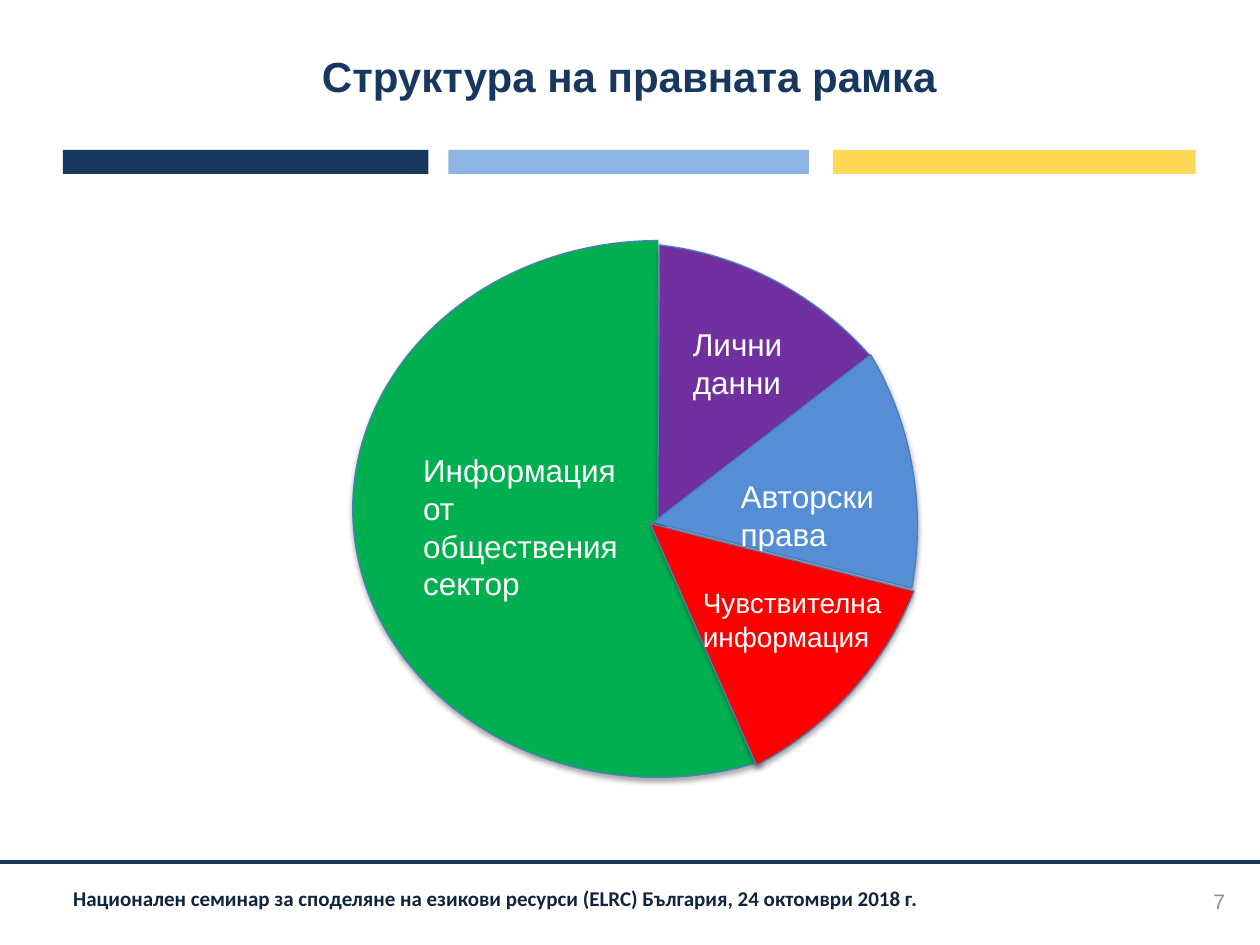
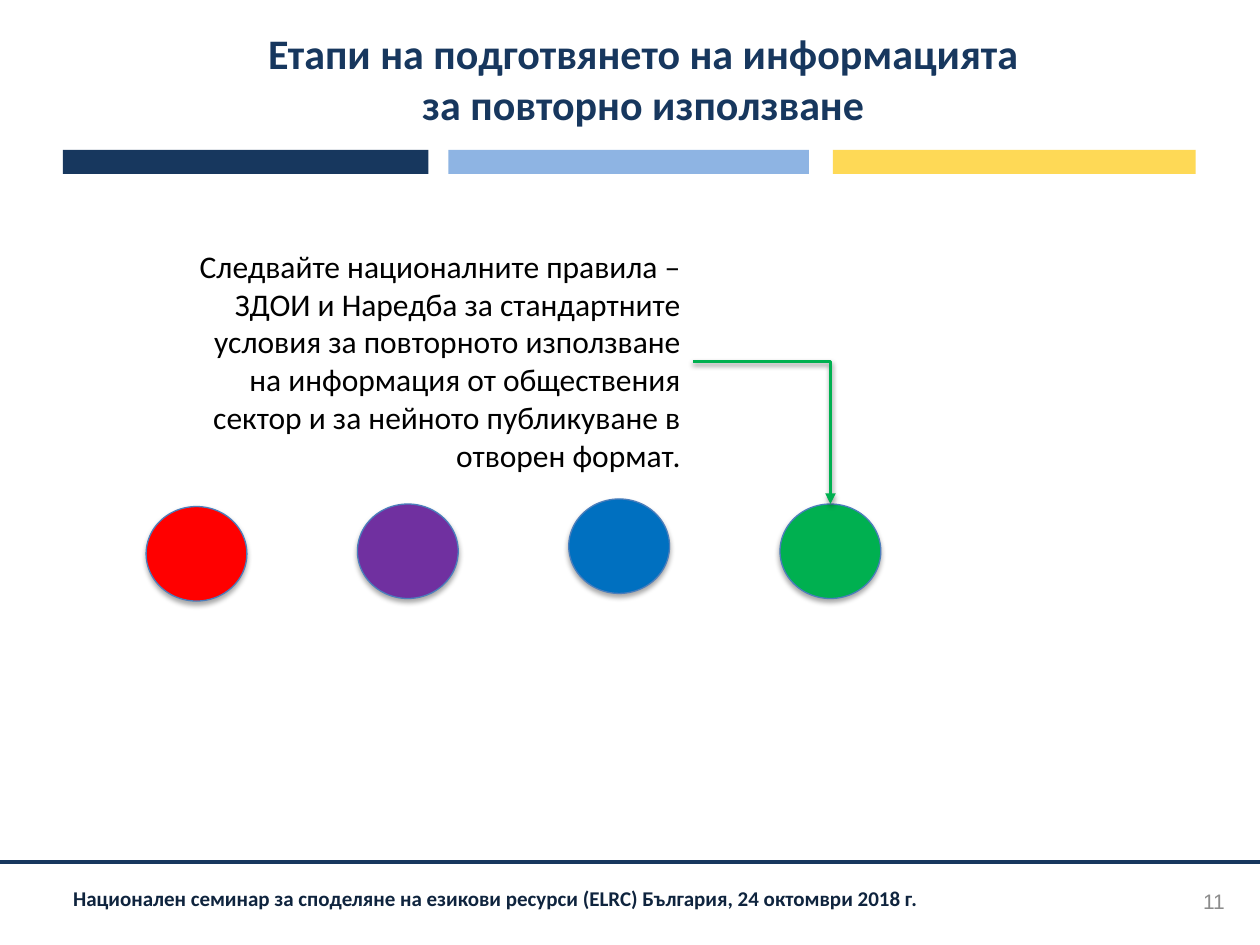
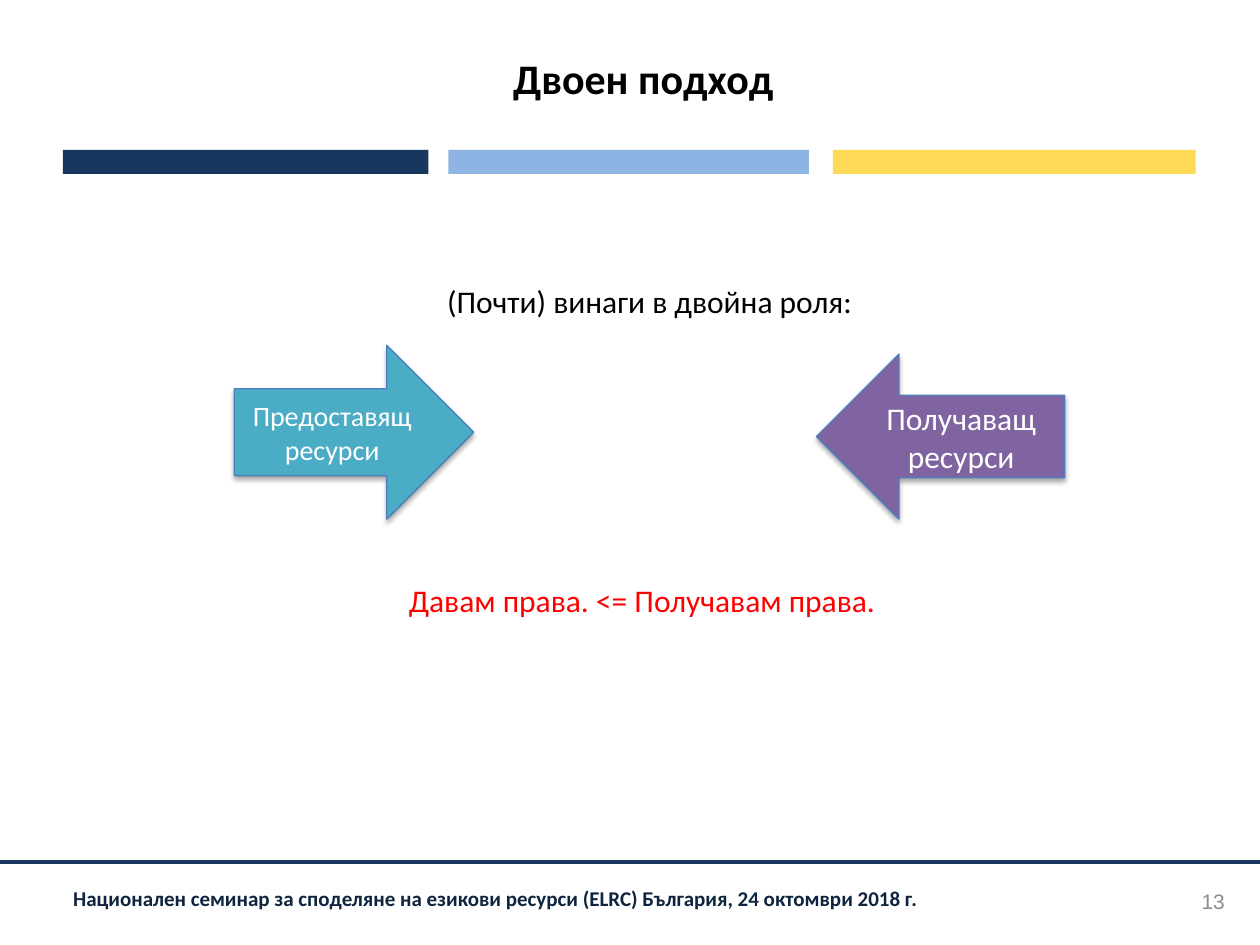
from collections import namedtuple

from lxml import etree
from pptx import Presentation
from pptx.dml.color import RGBColor
from pptx.enum.shapes import MSO_CONNECTOR, MSO_SHAPE
from pptx.enum.text import MSO_ANCHOR, PP_ALIGN
from pptx.oxml.ns import qn
from pptx.util import Emu, Inches, Pt

LEFT, CENTER, RIGHT = PP_ALIGN.LEFT, PP_ALIGN.CENTER, PP_ALIGN.RIGHT
TOP, MIDDLE = MSO_ANCHOR.TOP, MSO_ANCHOR.MIDDLE
RECTANGLE, OVAL, PIE = MSO_SHAPE.RECTANGLE, MSO_SHAPE.OVAL, MSO_SHAPE.PIE
RIGHT_ARROW, LEFT_ARROW = MSO_SHAPE.RIGHT_ARROW, MSO_SHAPE.LEFT_ARROW
STRAIGHT, ELBOW = MSO_CONNECTOR.STRAIGHT, MSO_CONNECTOR.ELBOW
SIDE_TOP, SIDE_RIGHT = 0, 3

# Grid: 100 columns by 75 rows of square cells
WIDTH, HEIGHT = Inches(10), Inches(7.5)
CELL = WIDTH / 100

NAVY, SKY, YELLOW = "17375E", "8EB4E3", "FED956"
INK, GREY, OUTLINE = "0F243E", "8C8C8C", "4B7EBC"
GREEN, PURPLE, RED = "00B050", "7030A0", "FF0000"
BLACK, WHITE = "000000", "FFFFFF"

FOOTER = ("Национален семинар за споделяне на езикови ресурси (ELRC) "
          "България, 24 октомври 2018 г.")

Box = namedtuple("Box", "x y w h")
Style = namedtuple("Style", "size font color bold", defaults=(False,))


def color(hex_value):
    return RGBColor.from_string(hex_value)


def cells(*values):
    return [Emu(round(value * CELL)) for value in values]


def inside(area, x, y, w, h):
    """Box given relative to the top left corner of an area."""
    return Box(area.x + x, area.y + y, w, h)


def add_effects(item, opacity=None, distance=1.8):
    """Empty effect list, or a soft shadow below when opacity is given."""
    effects = etree.SubElement(item._element.spPr, qn("a:effectLst"))
    if opacity:
        shadow = etree.SubElement(
            effects, qn("a:outerShdw"), blurRad=str(Pt(3.1)),
            dist=str(Pt(distance)), dir="5400000", rotWithShape="0")
        tint = etree.SubElement(shadow, qn("a:srgbClr"), val=BLACK)
        etree.SubElement(tint, qn("a:alpha"), val=str(opacity * 1000))


def write(frame, text, style, align=LEFT, anchor=TOP, insets=(0.1, 0.05),
          hanging=0, spacing=None):
    frame.word_wrap = True
    frame.vertical_anchor = anchor
    frame.margin_left = frame.margin_right = Inches(insets[0])
    frame.margin_top = frame.margin_bottom = Inches(insets[1])
    paragraph = frame.paragraphs[0]
    paragraph.alignment = align
    paragraph.line_spacing = spacing
    if hanging:
        properties = paragraph._p.get_or_add_pPr()
        properties.set("marL", str(Inches(hanging)))
        properties.set("indent", str(-Inches(hanging)))
    run = paragraph.add_run()
    run.text = text
    run.font.size = Pt(style.size)
    run.font.name = style.font
    run.font.bold = style.bold
    run.font.color.rgb = color(style.color)


def add_text(slide, box, text, style, **layout):
    label = slide.shapes.add_textbox(*cells(*box))
    write(label.text_frame, text, style, **layout)
    return label


def add_figure(slide, kind, box, fill, raised=True):
    figure = slide.shapes.add_shape(kind, *cells(*box))
    figure.fill.solid()
    figure.fill.fore_color.rgb = color(fill)
    if raised:
        figure.line.color.rgb = color(OUTLINE)
        figure.line.width = Pt(0.75)
        add_effects(figure, opacity=35)
    else:
        figure.line.fill.background()
        figure.shadow.inherit = False
    return figure


def add_line(slide, kind, ends, stroke, width):
    line = slide.shapes.add_connector(kind, *cells(*ends))
    line.line.color.rgb = color(stroke)
    line.line.width = Pt(width)
    return line


def add_frame(deck, title, title_box, title_style, number):
    """Blank slide with title, three-colour band, footer and number."""
    slide = deck.slides.add_slide(deck.slide_layouts[6])
    for x, width, fill in ((5, 29, NAVY), (35.6, 28.6, SKY),
                           (66.1, 28.8, YELLOW)):
        add_figure(slide, RECTANGLE, Box(x, 11.9, width, 1.9), fill,
                   raised=False)
    add_text(slide, Box(5, 70.1, 69.9, 2.6), FOOTER,
             Style(12, "Calibri", INK, True), insets=(0.08, 0.04),
             hanging=0.25, spacing=0.9)
    add_effects(add_line(slide, STRAIGHT, (100, 68.4, 0, 68.4), NAVY, 2.25))
    add_text(slide, title_box, title, title_style, align=CENTER,
             anchor=MIDDLE, insets=(0, 0))
    add_text(slide, Box(74.9, 69.5, 23.3, 4), str(number),
             Style(12, "Arial", GREY), align=RIGHT, anchor=MIDDLE)
    return slide


def add_sector(slide, box, fill, start, end, turn=0):
    sector = add_figure(slide, PIE, box, fill)
    # Pie angles are stored in 60000ths of a degree, scaled by 100000
    sector.adjustments[0] = start * 0.6
    sector.adjustments[1] = end * 0.6
    sector.rotation = turn


def add_legal_pie(slide, area):
    # Large sector
    add_sector(slide, inside(area, 0, 0.1, 48.4, 42.6), GREEN, 67.86, 270)
    add_text(slide, inside(area, 4.6, 16.3, 18.3, 13.1),
             "Информация от обществения сектор", Style(18, "Arial", WHITE))
    # Three equal sectors, each turned further by the same step
    sectors = (
        ("Лични данни", PURPLE, 18,
         (0.4, 1.2, 47.6, 42.4), (26, 6.3, 15.5, 7.1)),
        ("Авторски права", "558ED5", 18,
         (0, 1.5, 47.7, 41.9), (29.8, 18.4, 15.5, 7.1)),
        ("Чувствителна информация", RED, 16,
         (-0.2, 1.8, 47.6, 41.5), (26.8, 27, 19.1, 6.4)),
    )
    for i, (name, fill, size, sector_at, label_at) in enumerate(sectors):
        add_sector(slide, inside(area, *sector_at), fill, 235.26, 287.18,
                   turn=35.1 + 52 * i)
        add_text(slide, inside(area, *label_at), name,
                 Style(size, "Arial", WHITE))


def add_stages(slide, area):
    # Row of stages
    stages = ((RED, 21.1), (PURPLE, 20.9), ("0070C0", 20.5), (GREEN, 20.9))
    for i, (fill, y) in enumerate(stages):
        stage = add_figure(slide, OVAL,
                           inside(area, 16.77 * i, y, 8, 7.5), fill)
    # Advice leading to the last stage
    advice = add_text(
        slide, inside(area, 2.9, 0, 40.5, 19.2),
        "Следвайте националните правила – ЗДОИ и Наредба за стандартните "
        "условия за повторното използване на информация от обществения "
        "сектор и за нейното публикуване в отворен формат.",
        Style(18, "Calibri", BLACK), align=RIGHT)
    arrow = add_line(slide, ELBOW,
                     (area.x + 43.4, area.y + 9.6, area.x + 54.3,
                      area.y + 20.9), GREEN, 2)
    arrow.begin_connect(advice, SIDE_RIGHT)
    arrow.end_connect(stage, SIDE_TOP)
    properties = arrow._element.spPr
    properties.find(qn("a:prstGeom")).set("prst", "bentConnector2")
    etree.SubElement(properties.find(qn("a:ln")), qn("a:tailEnd"),
                     type="triangle")
    add_effects(arrow, opacity=38, distance=1.6)


def add_roles(slide, area):
    # Statements above and below the arrows
    for text, x, y, ink in (
            ("(Почти) винаги в двойна роля:", 0, 0, BLACK),
            ("Давам права. <= Получавам права.", -0.6, 23.7, RED)):
        add_text(slide, inside(area, x, y, area.w, 4), text,
                 Style(18, "Calibri", ink), align=CENTER, hanging=0.31)
    # Facing arrows
    for text, kind, at, fill, size in (
            ("Предоставящ ресурси", RIGHT_ARROW, (0, 5.5, 19, 13.8),
             "4BACC6", 16),
            ("Получаващ ресурси", LEFT_ARROW, (46.2, 6.2, 19.7, 13.1),
             "8064A2", 18)):
        role = add_figure(slide, kind, inside(area, *at), fill)
        write(role.text_frame, text, Style(size, "Calibri", WHITE),
              align=CENTER, anchor=MIDDLE)


def main():
    deck = Presentation()
    deck.slide_width, deck.slide_height = WIDTH, HEIGHT
    wide_title = Box(19.5, 1.6, 63.1, 9.2)

    legal = add_frame(deck, "Структура на правната рамка",
                      Box(19.5, 1.6, 60.9, 8.8),
                      Style(24, "Arial", NAVY, True), 7)
    add_legal_pie(legal, Box(28, 19, 48.4, 43.5))

    preparation = add_frame(
        deck, "Етапи на подготвянето на информацията за повторно използване",
        wide_title, Style(24, "Calibri", NAVY, True), 11)
    add_stages(preparation, Box(11.6, 19.1, 58.3, 28.6))

    approach = add_frame(deck, "Двоен подход", wide_title,
                         Style(24, "Calibri", BLACK, True), 13)
    add_roles(approach, Box(18.6, 21.9, 65.9, 27.7))

    deck.save("out.pptx")


if __name__ == "__main__":
    main()
